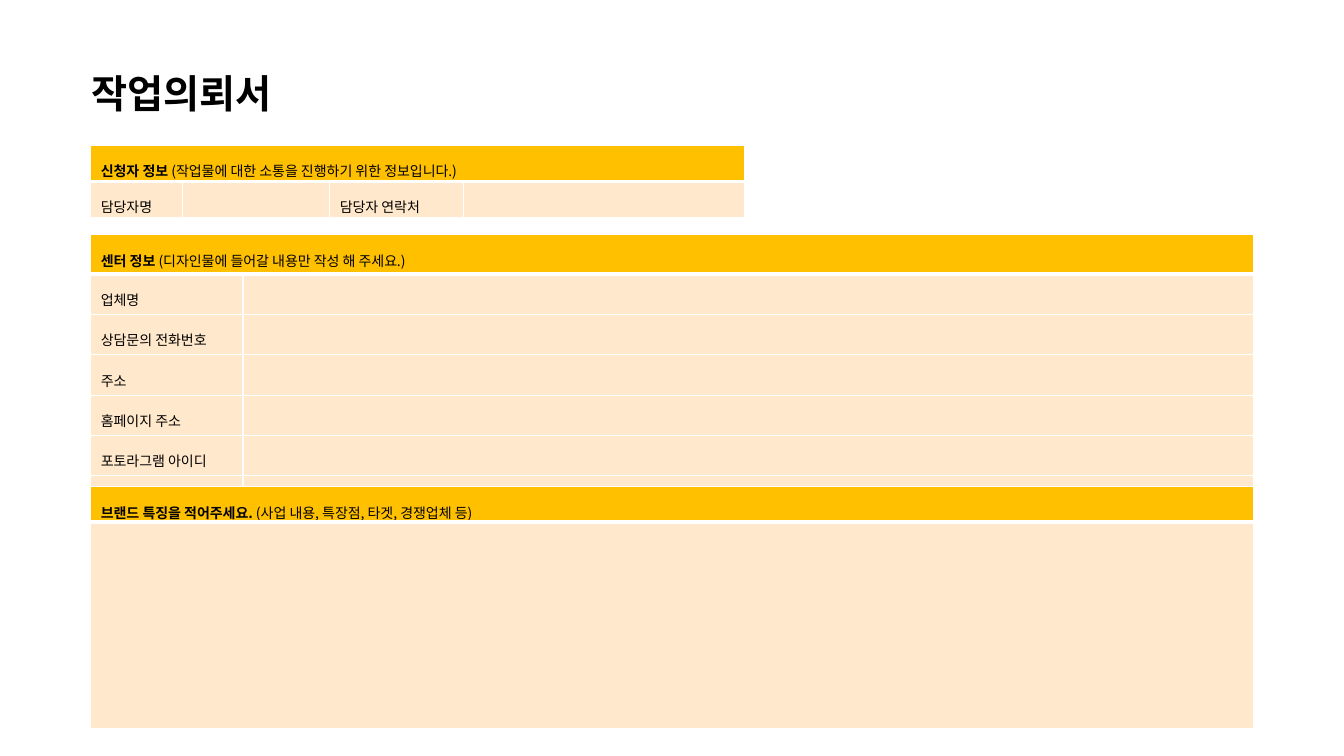
import pptx
import pptx.dml.color
import pptx.enum.text
import pptx.oxml
import pptx.oxml.ns
import pptx.util
from pptx.util import Inches

FONT = "Noto Sans CJK KR"
COLORS = {"text": "000000", "heading": "FFC000", "field": "FFE8CB", "border": "FFFFFF"}


def rgb(name):
    return pptx.dml.color.RGBColor.from_string(COLORS[name])


class RequestForm:
    """Holds the form's style and the slide being filled."""

    def __init__(self, presentation):
        self.slide = presentation.slides.add_slide(presentation.slide_layouts[5])

    def style(self, paragraph, size, bold=None):
        font = paragraph.font
        font.size = pptx.util.Pt(size)
        font.bold = bold
        font.color.rgb = rgb("text")
        font.name = FONT
        defaults = paragraph._p.pPr.find(pptx.oxml.ns.qn("a:defRPr"))
        defaults.append(pptx.oxml.parse_xml(
            f'<a:ea {pptx.oxml.ns.nsdecls("a")} typeface="{FONT}"/>'))

    def title(self, text, left, top, width, height):
        title = self.slide.shapes.title
        title.left, title.top = Inches(left), Inches(top)
        title.width, title.height = Inches(width), Inches(height)
        frame = title.text_frame
        frame.text = text
        frame.word_wrap = True
        frame.auto_size = pptx.enum.text.MSO_AUTO_SIZE.NONE
        frame.vertical_anchor = pptx.enum.text.MSO_ANCHOR.MIDDLE
        paragraph = frame.paragraphs[0]
        paragraph.alignment = pptx.enum.text.PP_ALIGN.LEFT
        self.style(paragraph, 28, True)

    def label(self, cell, *parts):
        """Put (text, bold) parts into one cell."""
        paragraph = cell.text_frame.paragraphs[0]
        paragraph.line_spacing = 1.5
        self.style(paragraph, 10)
        for text, bold in parts:
            run = paragraph.add_run()
            run.text = text
            run.font.bold = bold

    def borders(self, cell, top, bottom):
        properties = cell._tc.get_or_add_tcPr()
        widths = {"L": 1, "R": 1, "T": top, "B": bottom}
        for position, (side, width) in enumerate(widths.items()):
            properties.insert(position, pptx.oxml.parse_xml(
                f'<a:ln{side} {pptx.oxml.ns.nsdecls("a")} w="{pptx.util.Pt(width)}">'
                f'<a:solidFill><a:srgbClr val="{COLORS["border"]}"/></a:solidFill>'
                f'</a:ln{side}>'))

    def section(self, heading, hint, fields, top, widths, heights):
        """Add a table with a heading bar above rows of fields."""
        frame = self.slide.shapes.add_table(
            len(heights), len(widths), Inches(0.9), Inches(top),
            Inches(sum(widths)), Inches(sum(heights)))
        table = frame.table
        table.first_row = table.horz_banding = False
        for column, width in zip(table.columns, widths):
            column.width = Inches(width)
        for index, (row, height) in enumerate(zip(table.rows, heights)):
            row.height = Inches(height)
            for cell in row.cells:
                cell.margin_bottom = 0
                cell.fill.solid()
                cell.fill.fore_color.rgb = rgb("field" if index else "heading")
                self.borders(cell, 3 if index == 1 else 1, 1 if index else 3)
        if len(widths) > 1:
            table.cell(0, 0).merge(table.cell(0, len(widths) - 1))
        self.label(table.cell(0, 0), (heading, True), (hint, False))
        for (row, column), text in fields.items():
            self.label(table.cell(row, column), (text, False))


def main():
    presentation = pptx.Presentation()
    presentation.slide_width = Inches(13.33)
    presentation.slide_height = Inches(7.5)
    form = RequestForm(presentation)

    form.title("작업의뢰서", 0.81, 0.64, 2.3, 0.57)

    # Center details, whose last row runs under the brand section
    center_labels = ["업체명", "상담문의 전화번호", "주소", "홈페이지 주소", "포토라그램 아이디"]
    form.section(
        "센터 정보 ", "(디자인물에 들어갈 내용만 작성 해 주세요.)",
        {(row, 0): text for row, text in enumerate(center_labels, 1)},
        2.33, [1.51, 10.02], [0.39] + [0.4] * 5 + [0.29])

    # Applicant details
    form.section(
        "신청자 정보 ", "(작업물에 대한 소통을 진행하기 위한 정보입니다.)",
        {(1, 0): "담당자명", (1, 2): "담당자 연락처"},
        1.44, [0.91, 1.46, 1.33, 2.79], [0.36, 0.34])

    # Brand description
    form.section(
        "브랜드 특징을 적어주세요. ", "(사업 내용, 특장점, 타겟, 경쟁업체 등)",
        {}, 4.83, [11.53], [0.35, 2.05])

    presentation.save("out.pptx")


if __name__ == "__main__":
    main()
